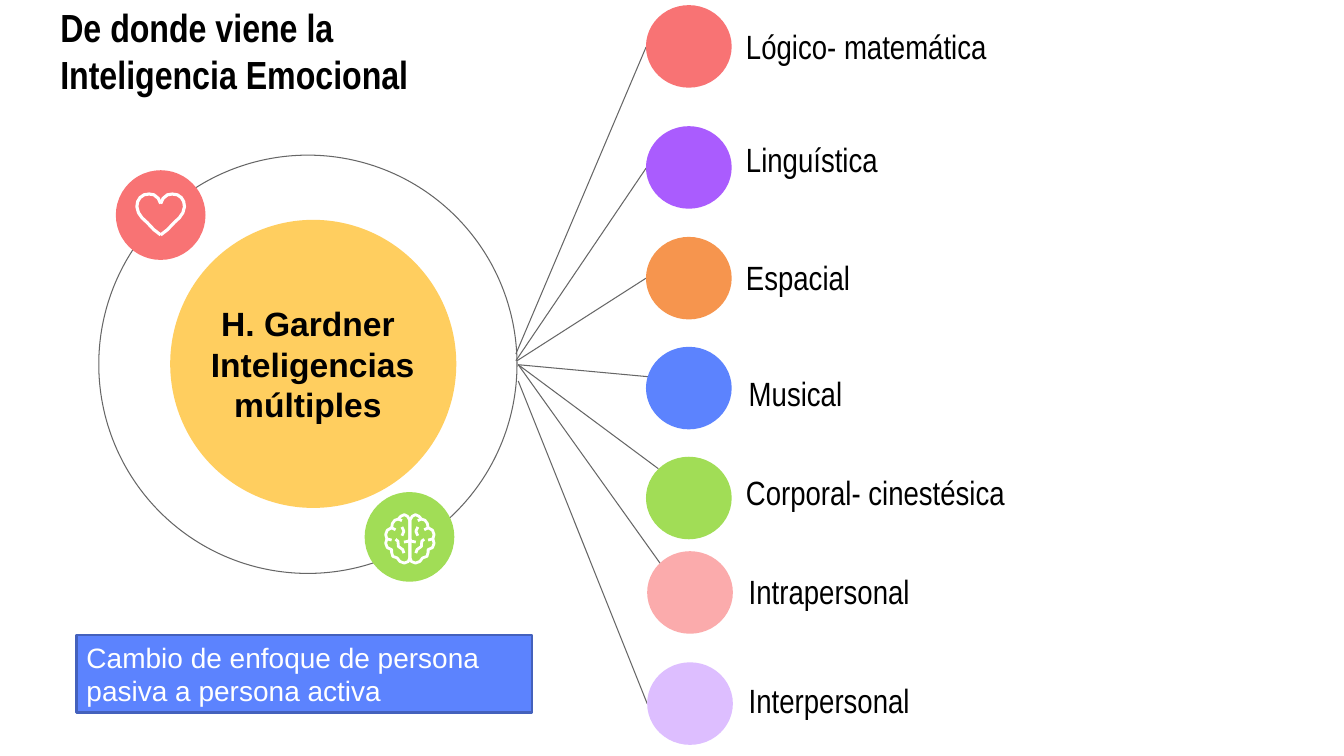
"""Build the slide on Gardner's multiple intelligences."""
from lxml.etree import SubElement
from pptx import Presentation
from pptx.dml.color import RGBColor
from pptx.enum.shapes import MSO_CONNECTOR, MSO_SHAPE
from pptx.enum.text import MSO_ANCHOR, MSO_AUTO_SIZE, PP_ALIGN
from pptx.oxml.ns import qn
from pptx.util import Cm, Pt

COLORS = {
    "black": "000000", "white": "FFFFFF", "grey": "666666", "yellow": "FFCE5F",
    "coral": "F87374", "purple": "AA5CFE", "orange": "F6954E", "blue": "5C83FE",
    "green": "A1DD56", "pink": "FBABAC", "lilac": "DDBEFF", "navy": "4461BC",
}

# name, colour, disc (left, top), label (left, top), ray start, ray end
INTELLIGENCES = [
    ("Lógico- matemática", "coral", (16.28, 0.13), (18.47, 0.33), (13.0, 8.92), (16.28, 1.19)),
    ("Linguística", "purple", (16.28, 3.18), (18.47, 3.18), (13.0, 9.09), (16.28, 4.24)),
    ("Espacial", "orange", (16.28, 5.97), (18.47, 6.15), (13.03, 9.09), (16.28, 7.01)),
    ("Musical", "blue", (16.28, 8.74), (18.54, 9.07), (13.06, 9.19), (17.83, 9.63)),
    ("Corporal- cinestésica", "green", (16.28, 11.51), (18.47, 11.56), (13.06, 9.19), (16.59, 11.81)),
    ("Intrapersonal", "pink", (16.31, 13.89), (18.54, 14.05), (13.06, 9.19), (16.84, 14.48)),
    ("Interpersonal", "lilac", (16.31, 16.69), (18.54, 16.81), (13.06, 9.6), (16.31, 17.73)),
]

HEART_HALF = [
    [(0, -28), (6, -41), (17, -50), (29, -52), (42, -50), (52, -43), (58, -33),
     (60, -20), (56, -5), (47, 8), (34, 20), (17, 38), (0, 51)],
]
BRAIN_HALF = [
    [(0, -47), (6, -57), (14, -61), (23, -57), (29, -50), (38, -47), (44, -39),
     (46, -28), (57, -22), (61, -11), (58, 0), (61, 11), (57, 22), (46, 27),
     (46, 34), (43, 44), (32, 48), (25, 57), (14, 61), (4, 57), (0, 47), (0, -47)],
    [(20, -30), (15, -19), (20, -8)],
    [(0, 1), (4, 6), (15, 8)],
    [(15, 36), (18, 27), (29, 19), (30, 6), (36, 1)],
    [(46, 3), (58, 0)],
    [(36, -23), (46, -28)],
    [(20, -46), (29, -50)],
]


def rgb(color):
    return RGBColor.from_string(COLORS[color])


def style_line(line, color, width):
    line.color.rgb = rgb(color)
    line.width = Pt(width)


def add_figure(slide, kind, left, top, width, height, fill=None, outline=None, weight=0.75):
    figure = slide.shapes.add_shape(kind, Cm(left), Cm(top), Cm(width), Cm(height))
    figure.shadow.inherit = False
    if fill:
        figure.fill.solid()
        figure.fill.fore_color.rgb = rgb(fill)
    else:
        figure.fill.background()
    if outline:
        style_line(figure.line, outline, weight)
    else:
        figure.line.fill.background()
    return figure


def add_ray(slide, start, end):
    ray = slide.shapes.add_connector(
        MSO_CONNECTOR.STRAIGHT, *(Cm(value) for value in start + end))
    style_line(ray.line, "grey", 0.75)
    SubElement(ray._element.spPr, qn("a:effectLst"))


def add_icon(slide, center_x, center_y, half, weight):
    """Draw strokes given in hundredths of a centimetre, with their mirror image."""
    strokes = [[(side * x, y) for x, y in stroke] for side in (1, -1) for stroke in half]
    builder = slide.shapes.build_freeform(*strokes[0][0], scale=Cm(0.01))
    builder.add_line_segments(strokes[0][1:], close=False)
    for stroke in strokes[1:]:
        builder.move_to(*stroke[0])
        builder.add_line_segments(stroke[1:], close=False)
    icon = builder.convert_to_shape(Cm(center_x), Cm(center_y))
    icon.shadow.inherit = False
    icon.fill.background()
    style_line(icon.line, "white", weight)


def write(frame, text, font, size, color="black", bold=False,
          align=PP_ALIGN.LEFT, anchor=MSO_ANCHOR.TOP, inset=None):
    frame.text = text
    frame.word_wrap = True
    frame.auto_size = MSO_AUTO_SIZE.NONE
    frame.vertical_anchor = anchor
    if inset is not None:
        frame.margin_left = frame.margin_right = Cm(inset)
        frame.margin_top = frame.margin_bottom = Cm(inset)
    for paragraph in frame.paragraphs:
        paragraph.alignment = align
        paragraph.font.name = font
        paragraph.font.size = Pt(size)
        paragraph.font.bold = bold
        paragraph.font.color.rgb = rgb(color)


def add_text(slide, left, top, width, height, text, *style, **options):
    box = slide.shapes.add_textbox(Cm(left), Cm(top), Cm(width), Cm(height))
    write(box.text_frame, text, *style, **options)


def place_title(slide):
    title = slide.shapes.title
    title.left, title.top, title.width, title.height = Cm(1.19), Cm(0.58), Cm(17.25), Cm(1.37)
    write(title.text_frame, "De donde viene la \vInteligencia Emocional", "Arial Narrow", 28,
          bold=True, anchor=MSO_ANCHOR.MIDDLE, inset=0.33)


def add_gardner_hub(slide):
    add_figure(slide, MSO_SHAPE.OVAL, 2.49, 3.91, 10.54, 10.54, outline="grey")
    add_figure(slide, MSO_SHAPE.OVAL, 4.29, 5.54, 7.21, 7.26, "yellow")
    add_text(slide, 5.05, 7.52, 5.66, 3.33, "H. Gardner \nInteligencias múltiples ",
             "Arial", 24, bold=True, align=PP_ALIGN.CENTER)
    add_figure(slide, MSO_SHAPE.OVAL, 2.92, 4.29, 2.26, 2.26, "coral")
    add_icon(slide, 4.05, 5.41, HEART_HALF, 2.25)
    add_figure(slide, MSO_SHAPE.OVAL, 9.19, 12.4, 2.26, 2.26, "green")
    add_icon(slide, 10.33, 13.58, BRAIN_HALF, 2)


def add_intelligence(slide, name, color, disc, label, start, end):
    add_ray(slide, start, end)
    add_figure(slide, MSO_SHAPE.OVAL, *disc, 2.16, 2.08, color)
    add_text(slide, *label, 11.71, 1.24, name, "Arial Narrow", 24, inset=0.33)


def main():
    deck = Presentation()
    deck.slide_width, deck.slide_height = Cm(33.87), Cm(19.05)
    slide = deck.slides.add_slide(deck.slide_layouts[5])
    place_title(slide)
    add_gardner_hub(slide)
    for intelligence in INTELLIGENCES:
        add_intelligence(slide, *intelligence)
    approach = add_figure(slide, MSO_SHAPE.RECTANGLE, 1.93, 16.0, 11.48, 1.96, "blue", "navy", 2)
    write(approach.text_frame, "Cambio de enfoque de persona pasiva a persona activa",
          "Arial", 20, "white", anchor=MSO_ANCHOR.MIDDLE)
    deck.save("out.pptx")


if __name__ == "__main__":
    main()
